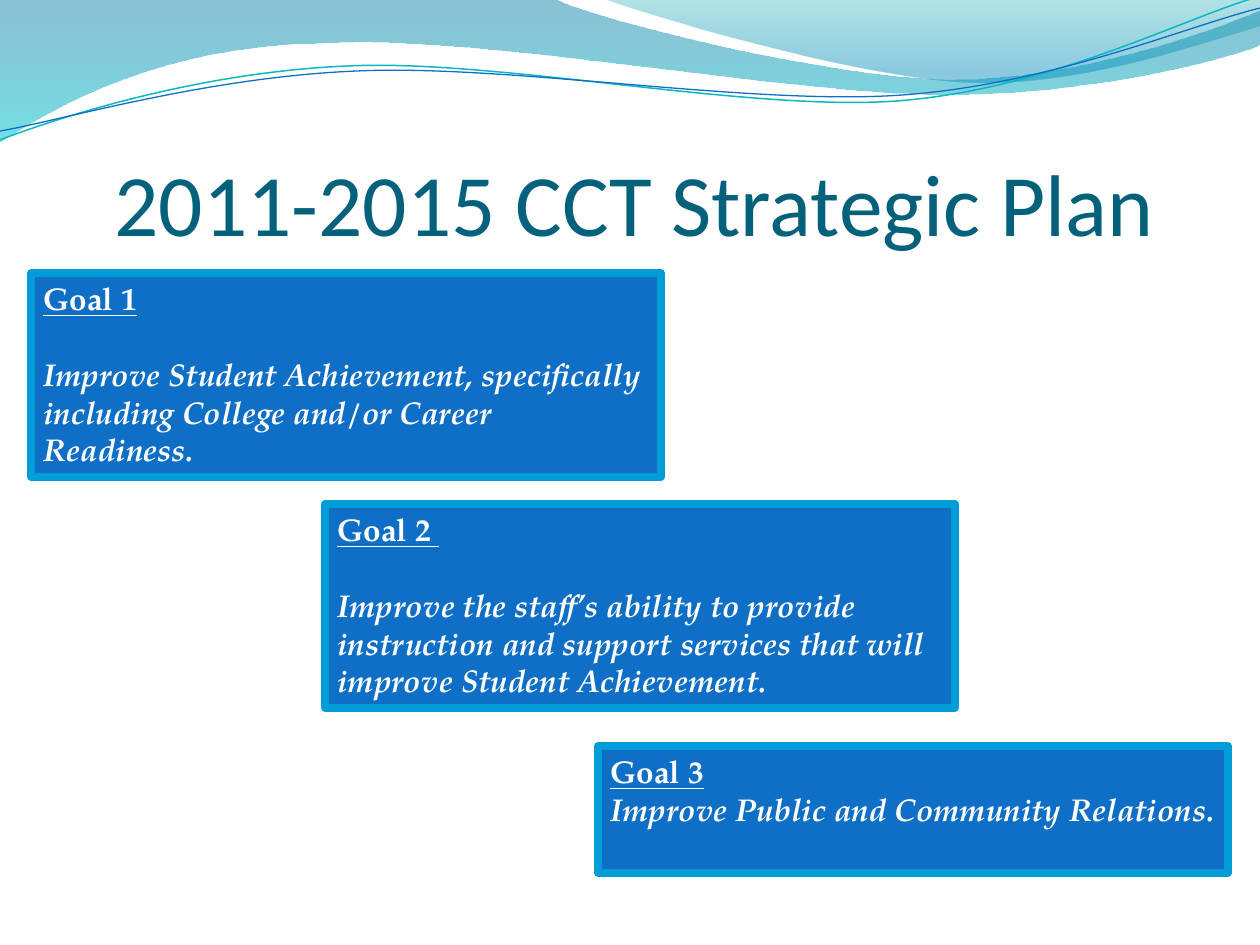
import math

import pptx
import pptx.util
import pptx.dml.color
import pptx.enum.shapes
import pptx.enum.text
import pptx.oxml
import pptx.oxml.ns

RGBColor = pptx.dml.color.RGBColor
PX = pptx.util.Inches(1) / 126
WHITE = RGBColor(0xFF, 0xFF, 0xFF)
TITLE_TEAL = RGBColor(0x04, 0x61, 0x7B)
GOAL_BLUE = RGBColor(0x0F, 0x6F, 0xC6)
GOAL_BORDER = RGBColor(0x00, 0x9D, 0xD9)
THREAD_TEAL = RGBColor(0x0A, 0xB8, 0xBF)
BAND_TOP = RGBColor(0x00, 0x74, 0xA1)
BAND_BOTTOM = RGBColor(0x00, 0xC6, 0xCF)
CREST_TOP = RGBColor(0x00, 0xA1, 0xA9)
CREST_BOTTOM = RGBColor(0x00, 0x8B, 0xBF)
GOAL_FONT = "TeX Gyre Pagella"
LINE_HEIGHT = 21.6
THREAD_TILT = -2.7

BAND = [[(0, 0)], [(554, -1)],
        [(600, 21), (837, 79), (955, 79)], [(1075, 79), (1207, 33), (1260, 11)],
        [(1261, 45)],
        [(1239, 55), (1096, 96), (940, 94)], [(784, 94), (481, 35), (324, 43)],
        [(163, 45), (58, 105), (-1, 142)]]
CREST = [[(604, -1)],
         [(641, 14), (859, 78), (969, 82)], [(1079, 87), (1211, 40), (1260, 26)],
         [(1260, 0)]]
TEAL_THREAD = [[(0, 140)],
               [(60, 117), (199, 72), (349, 66)], [(498, 59), (747, 112), (898, 101)],
               [(1050, 89), (1182, 19), (1257, -3)]]
BLUE_THREAD = [[(0, 131)],
               [(59, 121), (207, 77), (357, 71)], [(508, 64), (752, 106), (903, 95)],
               [(1053, 84), (1187, 26), (1260, 8)]]

GOALS = [
    ((31, 273, 630, 204), "Goal 1", LINE_HEIGHT,
     "Improve Student Achievement, specifically including College and/or Career Readiness."),
    ((325, 504, 630, 204), "Goal 2 ", LINE_HEIGHT,
     "Improve the staff’s ability to provide instruction and support services "
     "that will improve Student Achievement."),
    ((598, 746, 630, 127), "Goal 3", 0,
     "Improve Public and Community Relations."),
]


def emu(box):
    """Turn px lengths into EMU."""
    return [round(length * PX) for length in box]


def turn(segments, centre, degrees):
    """Rotate every point clockwise about a centre."""
    cx, cy = centre
    cos, sin = math.cos(math.radians(degrees)), math.sin(math.radians(degrees))
    return [[(cx + (x - cx) * cos - (y - cy) * sin,
              cy + (x - cx) * sin + (y - cy) * cos) for x, y in segment]
            for segment in segments]


def add_wave(slide, left, top, segments, close):
    """Draw an outline of lines (one point) and Bezier curves (three points)."""
    start, *rest = [emu((left + x, top + y)) for segment in segments for x, y in segment]
    outline = slide.shapes.build_freeform(*start, scale=1.0)
    outline.add_line_segments(rest, close=close)
    wave = outline.convert_to_shape()
    wave.shadow.inherit = False
    steps = iter(wave.element.spPr.xpath(".//a:path/a:lnTo"))
    for segment in segments[1:]:
        step = next(steps)
        if len(segment) == 3:
            step.tag = pptx.oxml.ns.qn("a:cubicBezTo")
            for _ in range(2):
                following = next(steps)
                step.append(following[0])
                following.getparent().remove(following)
    return wave


def fill_wave(wave, stops):
    """Fill a wave downwards with (position, colour, opacity percent) stops."""
    wave.line.fill.background()
    wave.fill.gradient()
    wave.fill.gradient_angle = 270
    for stop, (position, colour, opacity) in zip(wave.fill.gradient_stops, stops):
        stop.position = position
        stop.color.rgb = colour
    colours = wave.element.spPr.xpath(".//a:gs/a:srgbClr")
    for colour, (position, rgb, opacity) in zip(colours, stops):
        colour.append(pptx.oxml.parse_xml(
            '<a:alpha xmlns:a="http://schemas.openxmlformats.org/drawingml/2006/main"'
            f' val="{opacity * 1000}"/>'))


def add_header(slide, left, top):
    """Draw the two bands and two threads across the top."""
    band = add_wave(slide, left, top, BAND, True)
    fill_wave(band, [(0, BAND_TOP, 45), (1, BAND_BOTTOM, 55)])
    crest = add_wave(slide, left, top, CREST, True)
    fill_wave(crest, [(0, CREST_TOP, 30), (0.8, CREST_BOTTOM, 45)])
    for segments, centre, colour, width in [
            (TEAL_THREAD, (629, 72), THREAD_TEAL, 0.85),
            (BLUE_THREAD, (629, 74), GOAL_BLUE, 0.75)]:
        level = turn(segments, centre, -THREAD_TILT)
        thread = add_wave(slide, left, top, level, False)
        thread.rotation = THREAD_TILT
        thread.fill.background()
        thread.line.color.rgb = colour
        thread.line.width = pptx.util.Pt(width)


def add_run(paragraph, words, font, size, colour):
    """Append one styled run and return it."""
    run = paragraph.add_run()
    run.text = words
    run.font.name = font
    run.font.size = pptx.util.Pt(size)
    run.font.color.rgb = colour
    return run


def add_title(slide, box, words):
    """Place the centred slide title at the bottom of its box."""
    frame = slide.shapes.add_textbox(*emu(box)).text_frame
    frame.word_wrap = True
    frame.vertical_anchor = pptx.enum.text.MSO_ANCHOR.BOTTOM
    frame.margin_left = frame.margin_right = frame.margin_bottom = 0
    heading = frame.paragraphs[0]
    heading.alignment = pptx.enum.text.PP_ALIGN.CENTER
    add_run(heading, words, "Calibri", 50, TITLE_TEAL)


def add_goal(slide, box, name, gap, aim):
    """Place one goal panel with its underlined name and its aim."""
    panel = slide.shapes.add_shape(pptx.enum.shapes.MSO_SHAPE.RECTANGLE, *emu(box))
    panel.shadow.inherit = False
    panel.fill.solid()
    panel.fill.fore_color.rgb = GOAL_BLUE
    panel.line.color.rgb = GOAL_BORDER
    panel.line.width = pptx.util.Pt(4.25)
    panel.line._get_or_add_ln().append(pptx.oxml.parse_xml(
        '<a:round xmlns:a="http://schemas.openxmlformats.org/drawingml/2006/main"/>'))
    frame = panel.text_frame
    frame.word_wrap = True
    frame.vertical_anchor = pptx.enum.text.MSO_ANCHOR.TOP
    heading, body = frame.paragraphs[0], frame.add_paragraph()
    heading.alignment = body.alignment = pptx.enum.text.PP_ALIGN.LEFT
    body.space_before = pptx.util.Pt(gap)
    name_run = add_run(heading, name, GOAL_FONT, 18, WHITE)
    aim_run = add_run(body, aim, GOAL_FONT, 18, WHITE)
    name_run.font.bold = aim_run.font.bold = True
    name_run.font.underline = True
    aim_run.font.italic = True


def main():
    """Build the strategic plan slide."""
    deck = pptx.Presentation()
    deck.slide_width, deck.slide_height = emu((1260, 945))
    slide = deck.slides.add_slide(deck.slide_layouts[6])
    add_header(slide, 0, 0)
    add_title(slide, (63, 97, 1144, 157), "2011-2015 CCT Strategic Plan")
    for box, name, gap, aim in GOALS:
        add_goal(slide, box, name, gap, aim)
    deck.save("out.pptx")


if __name__ == "__main__":
    main()
